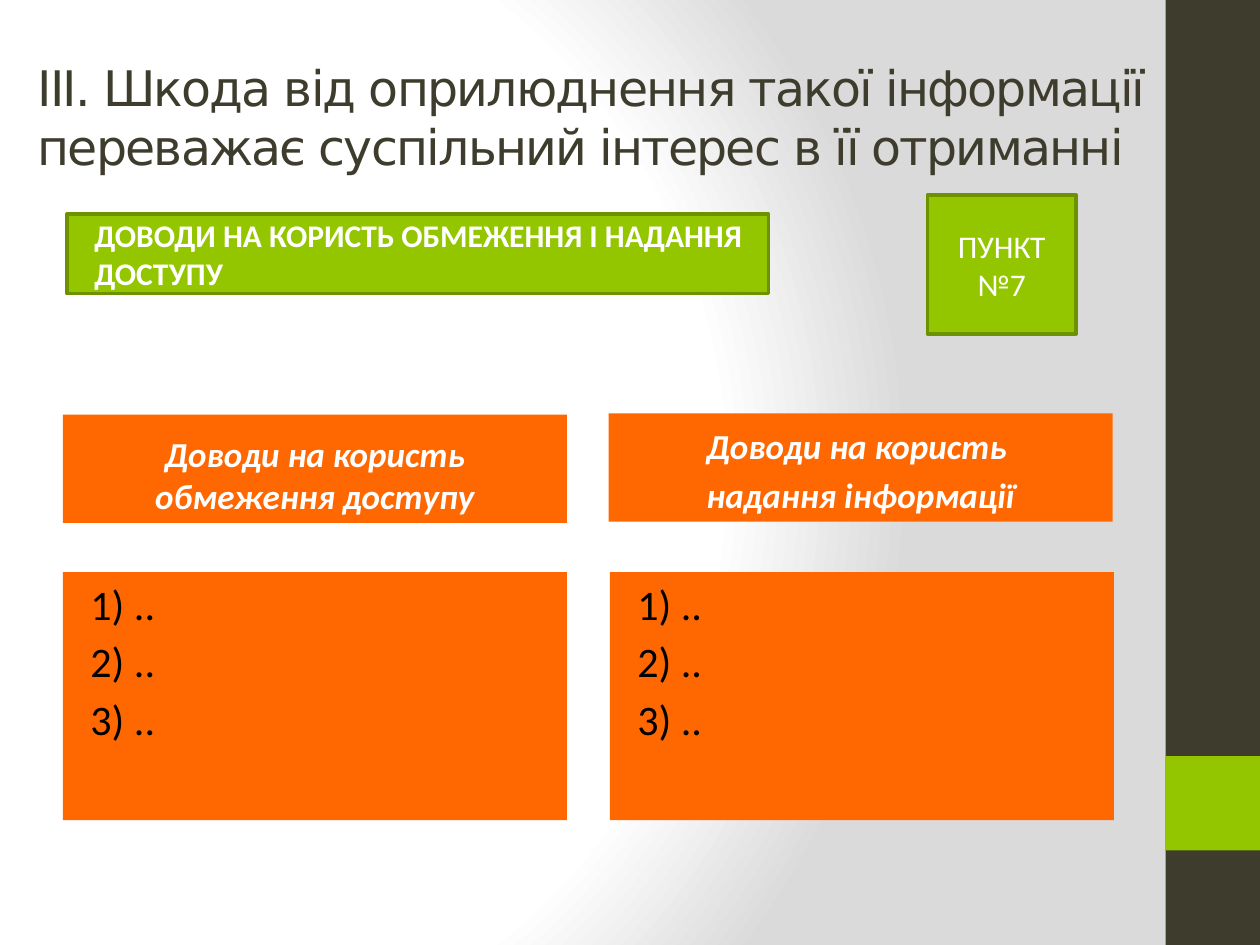
from dataclasses import dataclass
from typing import Optional

from pptx import Presentation
from pptx.dml.color import RGBColor
from pptx.enum.shapes import MSO_SHAPE as Shape
from pptx.enum.text import MSO_ANCHOR as Anchor, PP_ALIGN as Align
from pptx.oxml import parse_xml
from pptx.oxml.ns import nsdecls, qn
from pptx.util import Pt

WHITE, BLACK, DARK = "FFFFFF", "000000", "3E3D2D"
GREEN, OLIVE, ORANGE = "94C600", "6D9200", "FF6700"
INDENT = 8.64


@dataclass
class Text:
    lines: list[str]
    size: float
    color: str = WHITE
    face: str = "Calibri"
    bold: bool = False
    italic: bool = False
    align: Align = Align.LEFT
    anchor: Anchor = Anchor.MIDDLE
    before: float = 0
    indent: float = 0
    track: int = 0


@dataclass
class Box:
    left: float
    top: float
    width: float
    height: float
    fill: Optional[str] = None
    line: Optional[str] = None
    text: Optional[Text] = None


def color(code: str) -> RGBColor:
    return RGBColor.from_string(code)


def paint(slide) -> None:
    slide.background.fill.solid()
    node = slide.element.find(".//" + qn("p:bgPr"))
    stops = "".join(
        f'<a:gs pos="{place * 1000}"><a:srgbClr val="{code}"/></a:gs>'
        for place, code in [(0, WHITE), (75, WHITE), (100, "DADADA")]
    )
    blend = parse_xml(
        f'<a:gradFill {nsdecls("a")} rotWithShape="1"><a:gsLst>{stops}</a:gsLst>'
        '<a:path path="circle"><a:fillToRect l="20000" t="50000" '
        'r="100000" b="50000"/></a:path></a:gradFill>'
    )
    node.replace(node.find(qn("a:solidFill")), blend)


def write(frame, text: Text) -> None:
    frame.word_wrap = True
    frame.vertical_anchor = text.anchor
    style = {
        "name": text.face,
        "size": Pt(text.size),
        "bold": text.bold,
        "italic": text.italic,
    }
    for place, line in enumerate(text.lines):
        para = frame.add_paragraph() if place else frame.paragraphs[0]
        para.alignment = text.align
        para.space_before = Pt(text.before)
        if text.indent:
            props = para._p.get_or_add_pPr()
            props.set("marL", str(Pt(text.indent)))
            props.set("indent", "0")
        run = para.add_run()
        run.text = line
        for key, value in style.items():
            setattr(run.font, key, value)
        run.font.color.rgb = color(text.color)
        if text.track:
            run._r.get_or_add_rPr().set("spc", str(text.track))


def draw(slide, box: Box) -> None:
    area = [Pt(n) for n in (box.left, box.top, box.width, box.height)]
    if box.fill:
        shape = slide.shapes.add_shape(Shape.RECTANGLE, *area)
        shape.shadow.inherit = False
        shape.fill.solid()
        shape.fill.fore_color.rgb = color(box.fill)
        if box.line:
            shape.line.color.rgb = color(box.line)
            shape.line.width = Pt(2)
        else:
            shape.line.fill.background()
    else:
        shape = slide.shapes.add_textbox(*area)
    if box.text:
        write(shape.text_frame, box.text)


def head(lines: list[str]) -> Text:
    return Text(lines, 20, bold=True, italic=True, align=Align.CENTER,
                anchor=Anchor.BOTTOM, before=4)


def points() -> Text:
    return Text([f"{n}) .." for n in range(1, 4)], 24, BLACK,
                anchor=Anchor.TOP, before=4, indent=INDENT)


def main() -> None:
    deck = Presentation()
    deck.slide_width, deck.slide_height = Pt(720), Pt(540)
    slide = deck.slides.add_slide(deck.slide_layouts[6])
    paint(slide)

    title = Text(
        ["ІІІ. Шкода від оприлюднення такої інформації "
         "переважає суспільний інтерес в її отриманні"],
        28, DARK, "DejaVu Sans", track=-100,
    )
    topic = Text(["ДОВОДИ НА КОРИСТЬ ОБМЕЖЕННЯ І НАДАННЯ ДОСТУПУ"], 18,
                 bold=True, indent=INDENT)
    badge = Text(["ПУНКТ №7"], 18, align=Align.CENTER)
    limit = head(["Доводи на користь обмеження доступу"])
    grant = head(["Доводи на користь ", "надання інформації"])

    boxes = [
        Box(666, 0, 54, 540, DARK),
        Box(666, 432, 54, 54, GREEN),
        Box(14.4, 21.6, 652.3, 90, text=title),
        Box(36, 236.9, 288, 61.9, ORANGE, text=limit),
        Box(36, 326.9, 288, 141.8, ORANGE, text=points()),
        Box(347.8, 236.2, 288, 61.9, ORANGE, text=grant),
        Box(348.5, 326.9, 288, 141.8, ORANGE, text=points()),
        Box(38.2, 122.4, 401, 45.4, GREEN, OLIVE, topic),
        Box(529.9, 111.6, 85, 79.2, GREEN, OLIVE, badge),
    ]
    for box in boxes:
        draw(slide, box)
    deck.save("out.pptx")


if __name__ == "__main__":
    main()
